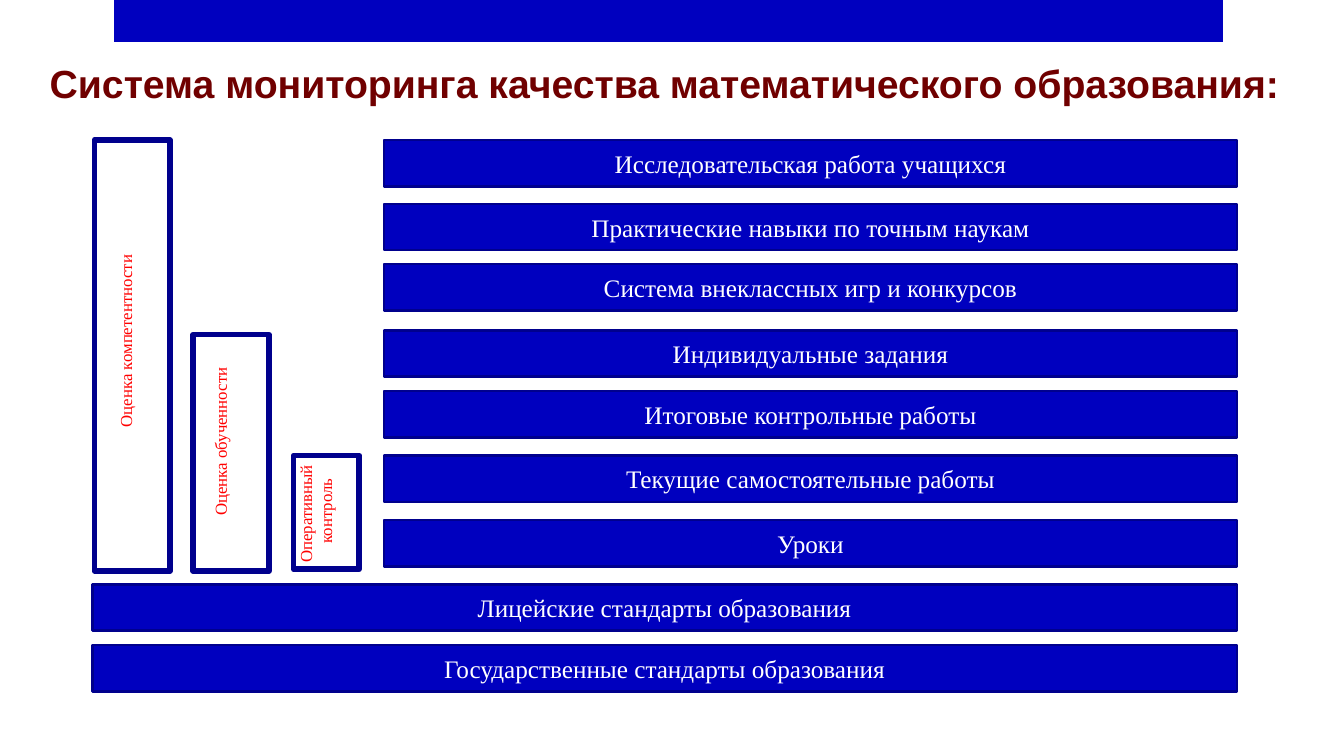
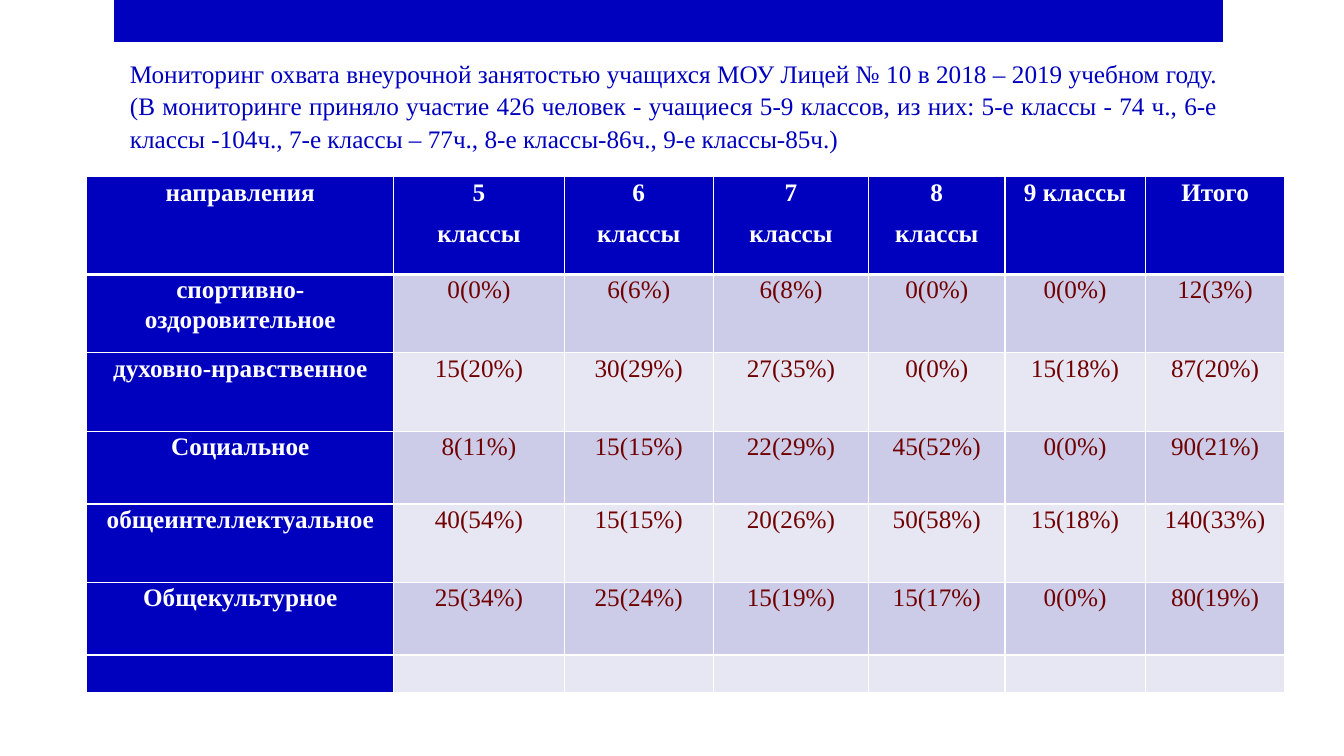
"""Build two slides on monitoring the quality of mathematics education."""
from dataclasses import dataclass, field
from typing import Any, NamedTuple

from lxml import etree
from pptx import Presentation
from pptx import util as u
from pptx.dml.color import RGBColor
from pptx.enum import shapes, text
from pptx.oxml import ns


@dataclass(frozen=True)
class Theme:
    blue: str = "0000BF"
    navy: str = "00008D"
    maroon: str = "700000"
    red: str = "FF0000"
    white: str = "FFFFFF"
    stripes: tuple[str, str] = ("CCCCE8", "E7E7F4")
    sans: str = "Arial"
    serif: str = "Times New Roman"
    title_size: float = 28
    body_size: float = 18
    label_size: float = 12


THEME = Theme()
ALIGN = text.PP_ALIGN


class Frame(NamedTuple):
    left: float
    top: float
    width: float
    height: float

    def lengths(self) -> list[u.Length]:
        return [u.Pt(value) for value in self]


@dataclass(frozen=True)
class Style:
    color: str
    size: float = THEME.body_size
    name: str = THEME.serif
    bold: bool = False
    para: dict[str, Any] = field(default_factory=lambda: {"alignment": ALIGN.CENTER})


class Bar(NamedTuple):
    label: str
    top: float
    left: float = 274.3
    width: float = 609.2


class Column(NamedTuple):
    lines: list[str]
    outline: Frame
    label: Frame


SPACED = {"alignment": ALIGN.CENTER, "line_spacing": 1.07, "space_after": u.Pt(8)}
TITLE = Style(THEME.maroon, THEME.title_size, THEME.sans, True)
BAR_TEXT = Style(THEME.white)
COLUMN_TEXT = Style(THEME.red, THEME.label_size)
INTRO = Style(THEME.blue, para={"alignment": ALIGN.JUSTIFY, "line_spacing": 1.07})
HEAD_CELL = Style(THEME.white, bold=True, para=SPACED)
DATA_CELL = Style(THEME.maroon, para=SPACED)

BAR_HEIGHT = 33.1
WIDE = {"left": 66, "width": 817.5}
BARS = [
    Bar("Исследовательская работа учащихся", 100),
    Bar("Практические навыки по точным наукам", 145.7),
    Bar("Система внеклассных игр и конкурсов", 188.6),
    Bar("Индивидуальные задания", 236),
    Bar("Итоговые контрольные работы", 279.4),
    Bar("Текущие самостоятельные работы", 325.5),
    Bar("Уроки", 371.6),
    Bar("Лицейские стандарты образования", 417.4, **WIDE),
    Bar("Государственные стандарты образования", 460.9, **WIDE),
]
COLUMNS = [
    Column(["Оперативный", "контроль"], Frame(209.6, 325.4, 47, 81.3),
           Frame(190.1, 338.4, 87.8, 53.3)),
    Column(["Оценка обученности"], Frame(138, 239, 54, 169),
           Frame(101.5, 298.8, 121.7, 31.7)),
    Column(["Оценка компетентности"], Frame(67.4, 100, 54, 307.8),
           Frame(23.8, 225.4, 141.8, 31.7)),
]

INTRO_TEXT = (
    "Мониторинг охвата внеурочной занятостью учащихся МОУ Лицей № 10 в 2018 – 2019 "
    "учебном году. (В мониторинге приняло участие 426 человек - учащиеся 5-9 классов, "
    "из них: 5-е классы - 74 ч., 6-е классы -104ч., 7-е классы – 77ч., "
    "8-е классы-86ч., 9-е классы-85ч.)"
)
TABLE_ROWS = [
    ["направления", "5\nклассы", "6\nклассы", "7\nклассы", "8\nклассы", "9 классы", "Итого"],
    ["спортивно-оздоровительное", "0(0%)", "6(6%)", "6(8%)", "0(0%)", "0(0%)", "12(3%)"],
    ["духовно-нравственное", "15(20%)", "30(29%)", "27(35%)", "0(0%)", "15(18%)", "87(20%)"],
    ["Социальное", "8(11%)", "15(15%)", "22(29%)", "45(52%)", "0(0%)", "90(21%)"],
    ["общеинтеллектуальное", "40(54%)", "15(15%)", "20(26%)", "50(58%)", "15(18%)", "140(33%)"],
    ["Общекультурное", "25(34%)", "25(24%)", "15(19%)", "15(17%)", "0(0%)", "80(19%)"],
    [""] * 7,
]
COLUMN_WIDTHS = [219.3, 121.7, 106.6, 110.9, 97.4, 100.1, 100]
ROW_HEIGHTS = [69.8, 56, 56, 52, 56, 52, 27]


def set_all(target: Any, values: dict[str, Any]) -> None:
    """Set every named attribute of the target."""
    for name, value in values.items():
        setattr(target, name, value)


def write(frame: Any, lines: list[str], style: Style) -> None:
    """Write one paragraph per line in the given style."""
    for index, line in enumerate(lines):
        para = frame.add_paragraph() if index else frame.paragraphs[0]
        set_all(para, style.para)
        if not line:
            continue
        span = para.add_run()
        span.text = line
        set_all(span.font, {"name": style.name, "size": u.Pt(style.size), "bold": style.bold})
        span.font.color.rgb = RGBColor.from_string(style.color)


def add_box(page: Any, frame: Frame, lines: list[str], style: Style, wrap: bool = True) -> Any:
    """Add a text box."""
    box = page.shapes.add_textbox(*frame.lengths())
    box.text_frame.word_wrap = wrap
    write(box.text_frame, lines, style)
    return box


def add_block(page: Any, frame: Frame, fill: str | None = None, line_width: float = 0) -> Any:
    """Add a rectangle with an optional fill and outline."""
    block = page.shapes.add_shape(shapes.MSO_SHAPE.RECTANGLE, *frame.lengths())
    block.shadow.inherit = False
    if fill:
        block.fill.solid()
        block.fill.fore_color.rgb = RGBColor.from_string(fill)
    else:
        block.fill.background()
    if line_width:
        block.line.width = u.Pt(line_width)
        block.line.color.rgb = RGBColor.from_string(THEME.navy)
    else:
        block.line.fill.background()
    return block


def add_page(deck: Any) -> Any:
    """Add a blank page with the top band."""
    page = deck.slides.add_slide(deck.slide_layouts[6])
    add_block(page, Frame(81.6, 0, 792, 30), THEME.blue)
    return page


def set_borders(cell: Any, widths: dict[str, float]) -> None:
    """Draw white borders on the named sides of a cell."""
    properties = cell._tc.get_or_add_tcPr()
    for side, width in widths.items():
        line = etree.SubElement(properties, ns.qn(f"a:ln{side}"), w=str(u.Pt(width)))
        fill = etree.SubElement(line, ns.qn("a:solidFill"))
        etree.SubElement(fill, ns.qn("a:srgbClr"), val=THEME.white)


def add_system_page(deck: Any) -> None:
    """Draw the monitoring system as bars and upright columns."""
    page = add_page(deck)
    add_box(page, Frame(13, 38.9, 923, 41),
            ["Система мониторинга качества математического образования:"], TITLE)
    for bar in BARS:
        block = add_block(page, Frame(bar.left, bar.top, bar.width, BAR_HEIGHT), THEME.blue, 1.75)
        block.text_frame.vertical_anchor = text.MSO_ANCHOR.MIDDLE
        write(block.text_frame, [bar.label], BAR_TEXT)
    for column in COLUMNS:
        add_block(page, column.outline, line_width=4)
    for column in COLUMNS:
        box = add_box(page, column.label, column.lines, COLUMN_TEXT, wrap=False)
        box.rotation = 270
        box.text_frame.paragraphs[0].alignment = ALIGN.LEFT


def add_coverage_page(deck: Any) -> None:
    """Draw the table of pupils by activity and year."""
    page = add_page(deck)
    add_box(page, Frame(85.7, 36.7, 791.3, 77), [INTRO_TEXT], INTRO)
    frame = Frame(62, 126.2, sum(COLUMN_WIDTHS), sum(ROW_HEIGHTS))
    table = page.shapes.add_table(len(ROW_HEIGHTS), len(COLUMN_WIDTHS), *frame.lengths()).table
    for column, width in zip(table.columns, COLUMN_WIDTHS):
        column.width = u.Pt(width)
    margins = {"margin_left": u.Pt(5), "margin_right": u.Pt(5), "margin_top": 0, "margin_bottom": 0}
    for row_index, values in enumerate(TABLE_ROWS):
        table.rows[row_index].height = u.Pt(ROW_HEIGHTS[row_index])
        for column_index, value in enumerate(values):
            cell = table.cell(row_index, column_index)
            is_head = row_index == 0 or column_index == 0
            set_all(cell, margins)
            set_borders(cell, {"L": 1, "R": 1, "T": 3 if row_index == 1 else 1,
                               "B": 3 if row_index == 0 else 1})
            cell.fill.solid()
            color = THEME.blue if is_head else THEME.stripes[(row_index - 1) % 2]
            cell.fill.fore_color.rgb = RGBColor.from_string(color)
            write(cell.text_frame, value.split("\n"), HEAD_CELL if is_head else DATA_CELL)


def main() -> None:
    """Build and save the deck."""
    deck = Presentation()
    set_all(deck, {"slide_width": u.Pt(960), "slide_height": u.Pt(540)})
    add_system_page(deck)
    add_coverage_page(deck)
    deck.save("out.pptx")


if __name__ == "__main__":
    main()
